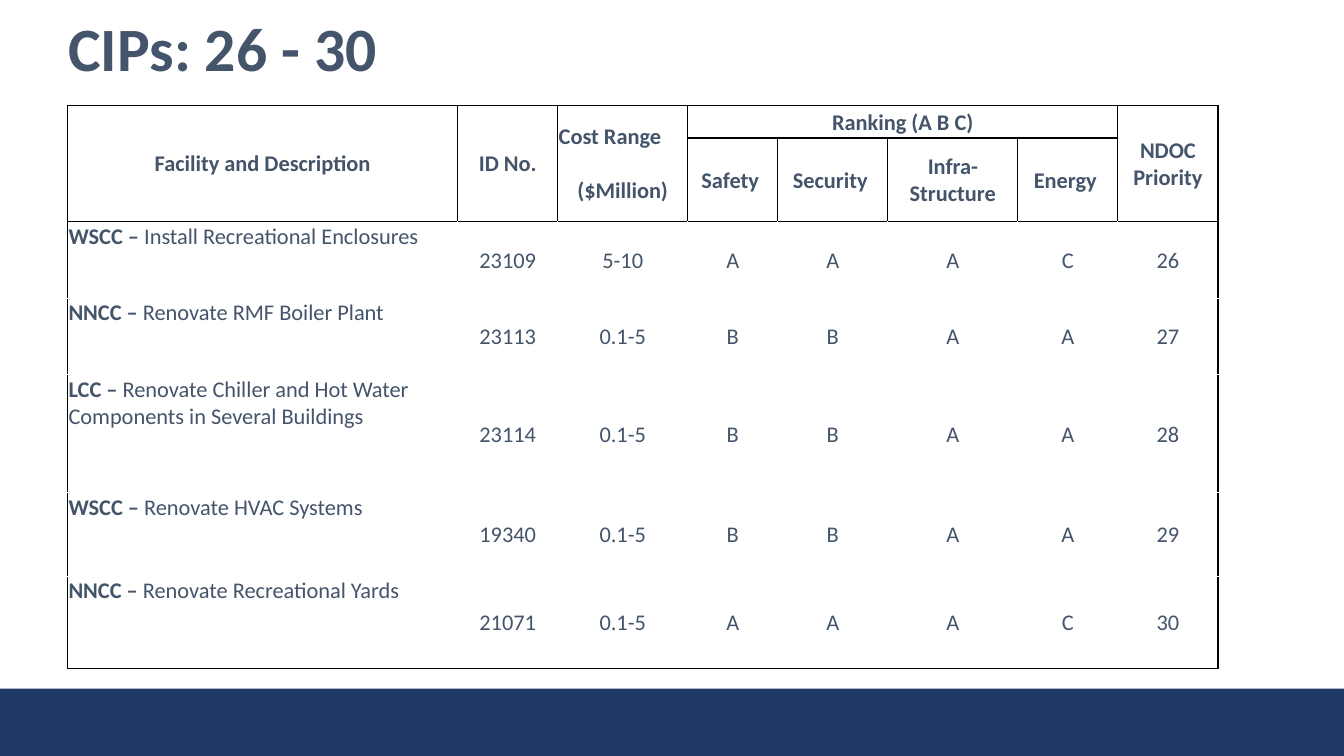
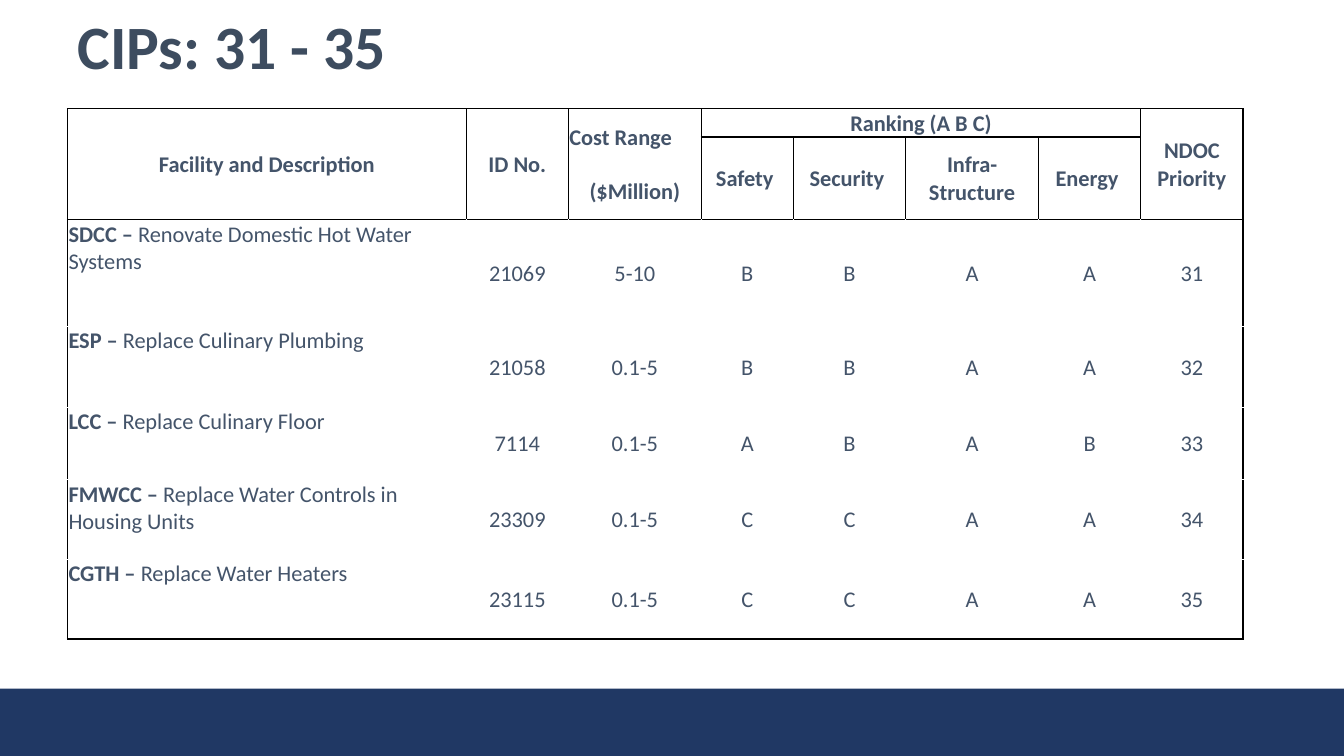
from lxml.etree import SubElement
from pptx import Presentation
from pptx.dml.color import RGBColor
from pptx.enum.shapes import MSO_SHAPE
from pptx.enum.text import MSO_ANCHOR, PP_ALIGN
from pptx.oxml.ns import qn
from pptx.util import Inches, Pt

COLORS = {"band": "203864", "text": "44546A", "title": "3D4C5F",
          "rule": "000000", "paper": "FFFFFF"}
FONT = "Calibri"
COLUMN_UNITS = [39, 10, 13, 9, 11, 13, 10, 10]
LAST_COLUMN = len(COLUMN_UNITS) - 1
RANKING_COLUMNS = range(3, 7)
HEADER_ROWS = 2
HEADERS = [
    ["Facility and Description", "ID No.", "Cost Range\n($Million)",
     "Ranking (A B C)", "", "", "", "NDOC Priority"],
    ["", "", "", "Safety ", "Security ", "Infra-Structure", "Energy ", ""],
]

PAGES = [
    {"title": "CIPs: 26 - 30", "title_box": (0.58, 0.1, 3.75, 0.82), "title_color": "text",
     "top": 1.05, "width": 11.41, "heights": [0.32, 0.83, 0.76, 0.76, 1.17, 0.83, 0.91],
     "projects": [
         ("WSCC – ", "Install Recreational Enclosures", "23109", "5-10", "AAAC", "26"),
         ("NNCC – ", "Renovate RMF Boiler Plant", "23113", "0.1-5", "BBAA", "27"),
         ("LCC – ", "Renovate Chiller and Hot Water Components in Several Buildings",
          "23114", "0.1-5", "BBAA", "28"),
         ("WSCC – ", "Renovate HVAC Systems", "19340", "0.1-5", "BBAA", "29"),
         ("NNCC – ", "Renovate Recreational Yards", "21071", "0.1-5", "AAAC", "30")]},
    {"title": "CIPs: 31 - 35", "title_box": (0.67, 0.07, 3.42, 0.85), "title_color": "title",
     "top": 1.08, "width": 11.66, "heights": [0.28, 0.82, 1.06, 0.8, 0.72, 0.79, 0.79],
     "projects": [
         ("SDCC – ", "Renovate Domestic Hot Water Systems", "21069", "5-10", "BBAA", "31"),
         ("ESP – ", "Replace Culinary Plumbing", "21058", "0.1-5", "BBAA", "32"),
         ("LCC – ", "Replace Culinary Floor", "7114", "0.1-5", "ABAB", "33"),
         ("FMWCC – ", "Replace Water Controls in Housing Units",
          "23309", "0.1-5", "CCAA", "34"),
         ("CGTH – ", "Replace Water Heaters", "23115", "0.1-5", "CCAA", "35")]},
]


def format_runs(paragraph, size, color, bold):
    for run in paragraph.runs:
        run.font.name, run.font.size, run.font.bold = FONT, Pt(size), bold
        run.font.color.rgb = RGBColor.from_string(COLORS[color])


def draw_borders(cell, sides):
    """Draw 1 pt cell edges; sides maps L, R, T, B (in that order) to colour names."""
    properties = cell._tc.get_or_add_tcPr()
    for position, (side, color) in enumerate(sides.items()):
        line = SubElement(properties, qn(f"a:ln{side}"), w=str(Pt(1)))
        fill = SubElement(line, qn("a:solidFill"))
        SubElement(fill, qn("a:srgbClr"), val=COLORS[color])
        properties.insert(position, line)


presentation = Presentation()
presentation.slide_width, presentation.slide_height = Inches(13.33), Inches(7.5)
blank_layout = presentation.slide_layouts[6]

for page in PAGES:
    slide = presentation.slides.add_slide(blank_layout)

    band_top = int(presentation.slide_height * 0.911)
    band = slide.shapes.add_shape(MSO_SHAPE.RECTANGLE, 0, band_top, presentation.slide_width,
                                  presentation.slide_height - band_top)
    band.shadow.inherit = False
    band.fill.solid()
    band.fill.fore_color.rgb = RGBColor.from_string(COLORS["band"])
    band.line.fill.background()

    title = slide.shapes.add_textbox(*map(Inches, page["title_box"])).text_frame
    title.word_wrap = True
    title.vertical_anchor = MSO_ANCHOR.MIDDLE
    title.text = page["title"]
    title.paragraphs[0].line_spacing = 0.9
    format_runs(title.paragraphs[0], 44, page["title_color"], True)

    rows = HEADERS + [[code + work, number, cost, *ranks, priority]
                      for code, work, number, cost, ranks, priority in page["projects"]]
    last_row = len(rows) - 1
    table = slide.shapes.add_table(
        len(rows), len(COLUMN_UNITS), Inches(0.67), Inches(page["top"]),
        Inches(page["width"]), Inches(sum(page["heights"]))).table
    table.first_row = table.horz_banding = False
    for column, units in zip(table.columns, COLUMN_UNITS):
        column.width = Inches(page["width"] * units / sum(COLUMN_UNITS))
    for row, height in zip(table.rows, page["heights"]):
        row.height = Inches(height)

    for row_index, texts in enumerate(rows):
        is_header = row_index < HEADER_ROWS
        for column_index, text in enumerate(texts):
            cell = table.cell(row_index, column_index)
            is_description = column_index == 0 and not is_header
            cell.fill.background()
            cell.margin_left = cell.margin_right = cell.margin_top = Inches(0.01)
            cell.margin_bottom = 0
            cell.vertical_anchor = MSO_ANCHOR.TOP if is_description else MSO_ANCHOR.MIDDLE
            cell.text_frame.text = text
            for paragraph in cell.text_frame.paragraphs:
                paragraph.alignment = PP_ALIGN.LEFT if is_description else PP_ALIGN.CENTER
                format_runs(paragraph, 16, "text", is_header)

            black = {"L": is_header or column_index == 0,
                     "R": is_header or column_index == LAST_COLUMN,
                     "T": row_index <= HEADER_ROWS,
                     "B": is_header or row_index == last_row}
            sides = {side: "rule" if on else "paper" for side, on in black.items()}
            if is_header and column_index not in RANKING_COLUMNS:
                del sides["B" if row_index == 0 else "T"]
            elif row_index == 0:
                if column_index > RANKING_COLUMNS[0]:
                    del sides["L"]
                if column_index < RANKING_COLUMNS[-1]:
                    del sides["R"]
            draw_borders(cell, sides)

    for row_index, project in enumerate(page["projects"], HEADER_ROWS):
        paragraph = table.cell(row_index, 0).text_frame.paragraphs[0]
        paragraph.runs[0].text = project[0]
        paragraph.add_run().text = project[1]
        format_runs(paragraph, 16, "text", False)
        paragraph.runs[0].font.bold = True

    cost_range, unit = table.cell(0, 2).text_frame.paragraphs
    cost_range.alignment = PP_ALIGN.LEFT
    unit.space_before = Pt(19)

    table.cell(0, RANKING_COLUMNS[0]).merge(table.cell(0, RANKING_COLUMNS[-1]))
    for column_index in range(len(COLUMN_UNITS)):
        if column_index not in RANKING_COLUMNS:
            table.cell(0, column_index).merge(table.cell(1, column_index))

presentation.save("out.pptx")
